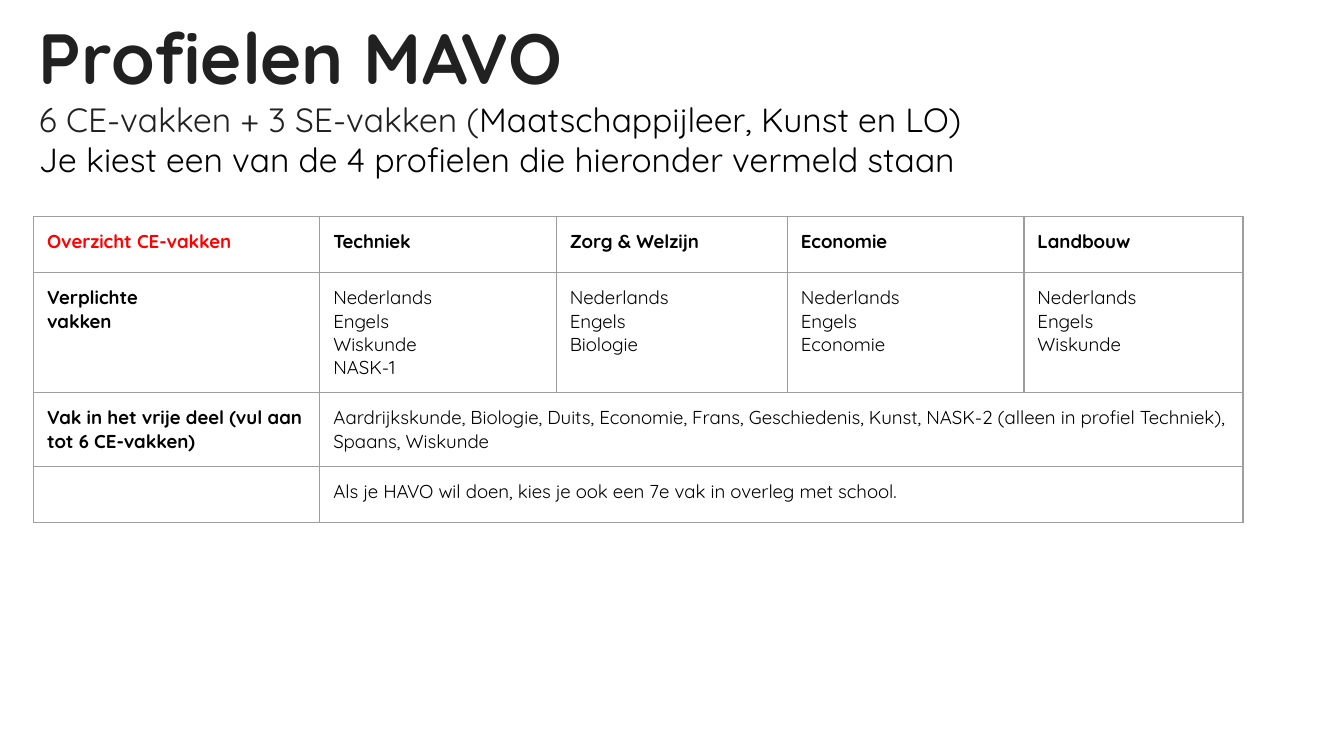
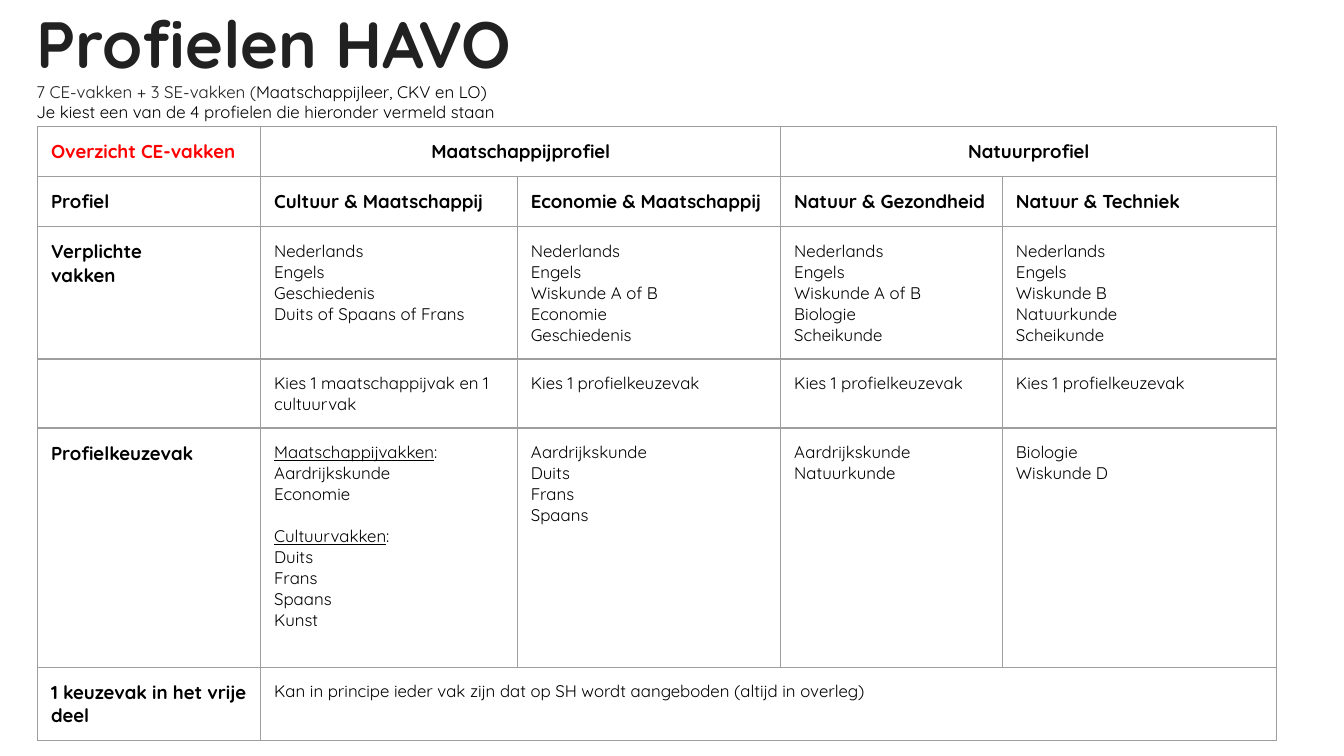
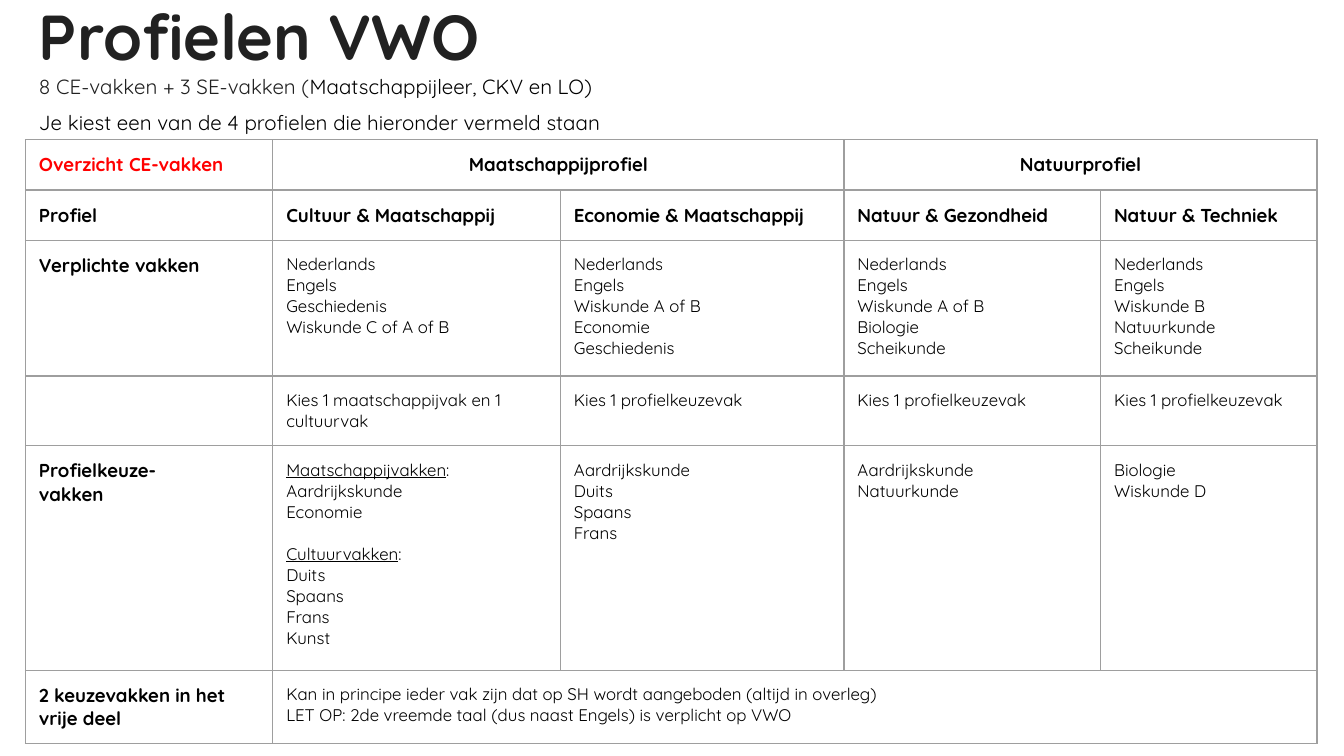
from dataclasses import dataclass

from lxml.etree import SubElement
from pptx import Presentation
from pptx.dml.color import RGBColor
from pptx.enum.text import MSO_ANCHOR as Anchor, MSO_AUTO_SIZE as AutoSize, PP_ALIGN as Align
from pptx.oxml import parse_xml
from pptx.oxml.ns import nsdecls, qn
from pptx.util import Inches, Pt

FONT = "Quicksand"
DARK = RGBColor(0x21, 0x21, 0x21)
BLACK = RGBColor(0, 0, 0)
RED = RGBColor(0xFF, 0, 0)
GREY = RGBColor(0x9E, 0x9E, 0x9E)
MARGIN = Inches(0.1)
LABEL_SIZE = 10
CORNER = "Overzicht CE-vakken"
CHOOSE_LINE = "Je kiest een van de 4 profielen die hieronder vermeld staan"
CHOOSE_ONE = "Kies 1 profielkeuzevak"
FREE_CHOICE = "Kan in principe ieder vak zijn dat op SH wordt aangeboden (altijd in overleg)"

Row = list[str | None]


@dataclass
class Heading:
    text: str
    left: float
    top: float
    size: float
    exams: str
    school_subjects: str
    line_size: float
    line_pitch: float
    line_gap: float = 0


@dataclass
class SubjectTable:
    left: float
    top: float
    columns: list[float]
    heights: list[float]
    rows: list[Row]
    header_rows: int
    body_size: float


def lines(*texts: str) -> str:
    return "\n".join(texts)


def profile_rows(required: str, culture_required: str, elective: str,
                 languages: list[str], free: str, free_text: str) -> list[Row]:
    core = ["Nederlands", "Engels"]
    return [
        [CORNER, "Maatschappijprofiel", None, "Natuurprofiel", None],
        ["Profiel", "Cultuur & Maatschappij", "Economie & Maatschappij",
         "Natuur & Gezondheid", "Natuur & Techniek"],
        [required,
         lines(*core, "Geschiedenis", culture_required),
         lines(*core, "Wiskunde A of B", "Economie", "Geschiedenis"),
         lines(*core, "Wiskunde A of B", "Biologie", "Scheikunde"),
         lines(*core, "Wiskunde B", "Natuurkunde", "Scheikunde")],
        ["", "Kies 1 maatschappijvak en 1 cultuurvak"] + [CHOOSE_ONE] * 3,
        [elective,
         lines("Maatschappijvakken:", "Aardrijkskunde", "Economie",
               "Cultuurvakken:", *languages, "Kunst"),
         lines("Aardrijkskunde", *languages),
         lines("Aardrijkskunde", "Natuurkunde"),
         lines("Biologie", "Wiskunde D")],
        [free, free_text, None, None, None],
    ]


MAVO_ROWS: list[Row] = [
    [CORNER, "Techniek", "Zorg & Welzijn", "Economie", "Landbouw"],
    [lines("Verplichte", "vakken"),
     lines("Nederlands", "Engels", "Wiskunde", "NASK-1"),
     lines("Nederlands", "Engels", "Biologie"),
     lines("Nederlands", "Engels", "Economie"),
     lines("Nederlands", "Engels", "Wiskunde")],
    ["Vak in het vrije deel (vul aan tot 6 CE-vakken)",
     "Aardrijkskunde, Biologie, Duits, Economie, Frans, Geschiedenis, Kunst, "
     "NASK-2 (alleen in profiel Techniek), Spaans, Wiskunde", None, None, None],
    ["", "Als je HAVO wil doen, kies je ook een 7e vak in overleg met school.",
     None, None, None],
]
HAVO_ROWS = profile_rows(
    lines("Verplichte", "vakken"), "Duits of Spaans of Frans", "Profielkeuzevak",
    ["Duits", "Frans", "Spaans"], "1 keuzevak in het vrije deel", FREE_CHOICE)
VWO_ROWS = profile_rows(
    "Verplichte vakken", "Wiskunde C of A of B", lines("Profielkeuze-", "vakken"),
    ["Duits", "Spaans", "Frans"], "2 keuzevakken in het vrije deel",
    lines(FREE_CHOICE, "LET OP: 2de vreemde taal (dus naast Engels) is verplicht op VWO"))

SLIDES = [
    (Heading("Profielen MAVO", 0.19, 0, 38, "6 CE-vakken + 3 SE-vakken (",
             "Maatschappijleer, Kunst en LO)", 18, 21.7),
     SubjectTable(0.25, 1.61, [2.13, 1.76, 1.72, 1.76, 1.63], [0.42] * 4,
                  MAVO_ROWS, 1, 10)),
    (Heading("Profielen HAVO", 0.17, -0.08, 35, "7 CE-vakken + 3 SE-vakken (",
             "Maatschappijleer, CKV en LO)", 9, 11),
     SubjectTable(0.28, 0.94, [1.66, 1.91, 1.96, 1.65, 2.04],
                  [0.34, 0.35, 0.96, 0.46, 1.78, 0.48], HAVO_ROWS, 2, 9)),
    (Heading("Profielen VWO", 0.19, -0.12, 34, "8 CE-vakken + 3 SE-vakken (",
             "Maatschappijleer, CKV en LO)", 11, 13.5, 6),
     SubjectTable(0.19, 1.04, [1.84, 2.14, 2.11, 1.91, 1.61],
                  [0.36, 0.35, 1.01, 0.52, 1.67, 0.52], VWO_ROWS, 2, 9)),
]


def style_paragraph(paragraph, size: float, color: RGBColor, bold: bool) -> None:
    font = paragraph.font
    font.name = FONT
    font.size = Pt(size)
    font.bold = bold
    font.color.rgb = color


def add_heading(slide, heading: Heading) -> None:
    title = slide.shapes.title
    title.left, title.top = Inches(heading.left), Inches(heading.top)
    title.width, title.height = Inches(9.32), Inches(0.88)
    frame = title.text_frame
    frame.word_wrap = True
    frame.auto_size = AutoSize.NONE
    frame.vertical_anchor = Anchor.TOP
    frame.margin_left = frame.margin_right = MARGIN
    frame.margin_top = frame.margin_bottom = MARGIN
    frame.text = lines(heading.text, heading.exams, CHOOSE_LINE)
    name, subjects, choice = frame.paragraphs
    style_paragraph(name, heading.size, DARK, True)
    name.alignment = Align.LEFT
    for paragraph in (subjects, choice):
        style_paragraph(paragraph, heading.line_size, BLACK, False)
        paragraph.alignment = Align.LEFT
        paragraph.line_spacing = Pt(heading.line_pitch)
    subjects.runs[0].font.color.rgb = DARK
    subjects.add_run().text = heading.school_subjects
    choice.space_before = Pt(heading.line_gap)


def add_borders(cell) -> None:
    properties = cell._tc.get_or_add_tcPr()
    for index, side in enumerate(("lnL", "lnR", "lnT", "lnB")):
        properties.insert(index, parse_xml(
            f'<a:{side} {nsdecls("a")} w="{Pt(0.75)}"><a:solidFill>'
            f'<a:srgbClr val="{GREY}"/></a:solidFill></a:{side}>'))


def fill_cell(cell, text: str, size: float, color: RGBColor, bold: bool) -> None:
    cell.margin_left = cell.margin_right = MARGIN
    cell.margin_top = cell.margin_bottom = MARGIN
    cell.fill.background()
    add_borders(cell)
    frame = cell.text_frame
    for index, line in enumerate(text.split("\n")):
        paragraph = frame.add_paragraph() if index else frame.paragraphs[0]
        style_paragraph(paragraph, size, color, bold)
        if line.endswith(":"):
            category = paragraph.add_run()
            category.text = line[:-1]
            category.font.underline = True
            paragraph.add_run().text = ":"
            if index:
                paragraph.space_before = Pt(size * 1.25)
        elif line:
            paragraph.add_run().text = line
        else:
            SubElement(paragraph._p, qn("a:endParaRPr"), sz=str(int(size * 100)))


def add_subject_table(slide, data: SubjectTable) -> None:
    table = slide.shapes.add_table(
        len(data.rows), len(data.columns), Inches(data.left), Inches(data.top),
        Inches(sum(data.columns)), Inches(sum(data.heights))).table
    table.first_row = table.horz_banding = False
    for column, width in zip(table.columns, data.columns):
        column.width = Inches(width)
    for row, height in zip(table.rows, data.heights):
        row.height = Inches(height)
    for row_index, texts in enumerate(data.rows):
        header = row_index < data.header_rows
        for column_index, text in enumerate(texts):
            cell = table.cell(row_index, column_index)
            bold = header or column_index == 0
            fill_cell(cell, text or "", LABEL_SIZE if bold else data.body_size,
                      RED if text == CORNER else BLACK, bold)
            end = column_index
            while end + 1 < len(texts) and texts[end + 1] is None:
                end += 1
            if text is not None and end > column_index:
                cell.merge(table.cell(row_index, end))
                if header:
                    cell.text_frame.paragraphs[0].alignment = Align.CENTER


def main() -> None:
    presentation = Presentation()
    presentation.slide_width = Inches(10)
    presentation.slide_height = Inches(10 * 9 / 16)
    title_only = presentation.slide_layouts[5]
    for heading, subject_table in SLIDES:
        slide = presentation.slides.add_slide(title_only)
        add_heading(slide, heading)
        add_subject_table(slide, subject_table)
    presentation.save("out.pptx")


if __name__ == "__main__":
    main()
